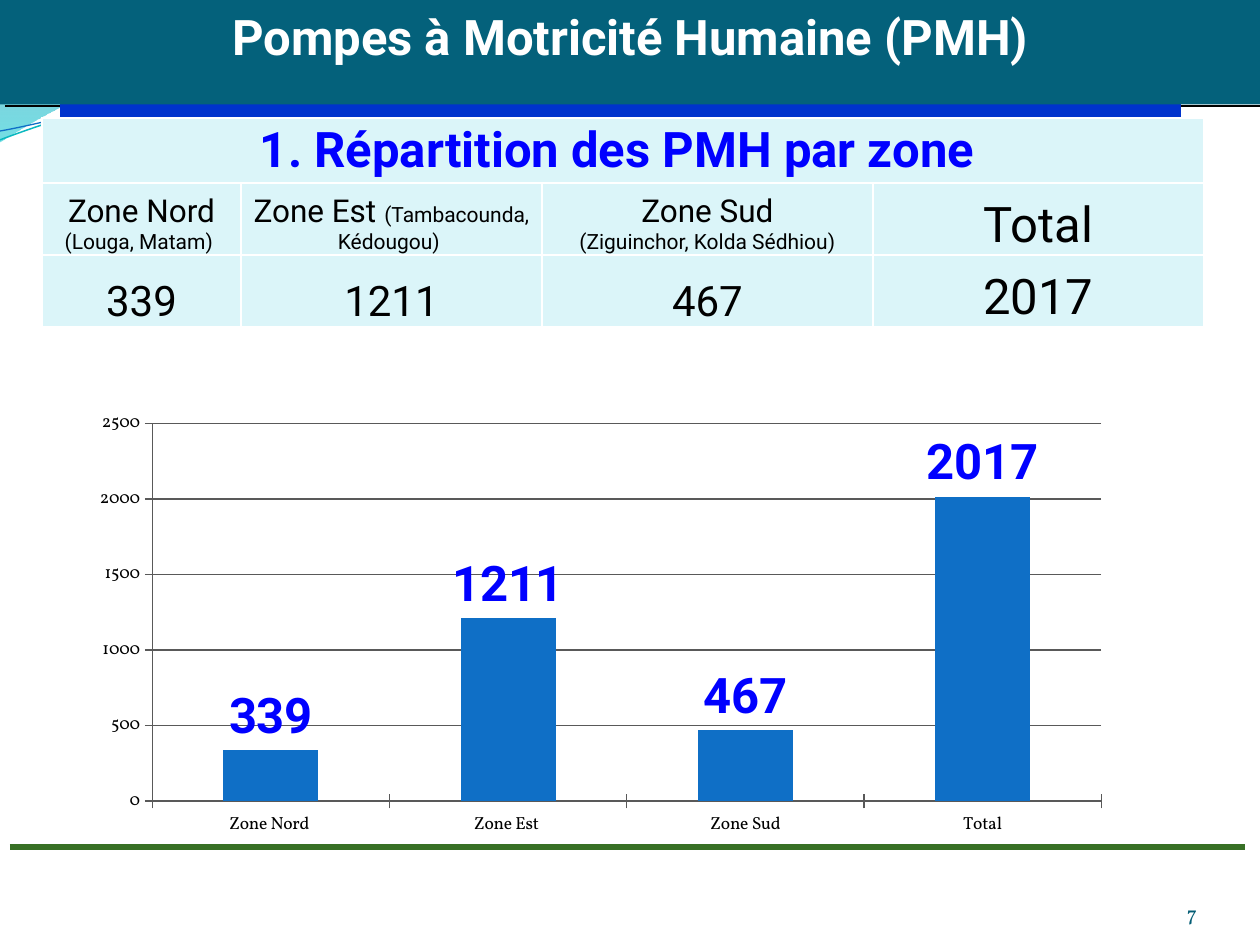
import math
import pptx
import pptx.chart.data
import pptx.dml.color
import pptx.enum.chart
import pptx.enum.shapes
import pptx.enum.text
import pptx.oxml
import pptx.oxml.ns
import pptx.util
from dataclasses import dataclass

SCALE = 914400 / 126  # EMU in one px
Align = pptx.enum.text.PP_ALIGN
Anchor = pptx.enum.text.MSO_ANCHOR
qn = pptx.oxml.ns.qn


@dataclass(frozen=True)
class Theme:
    sans: str = "Roboto"
    serif: str = "Vollkorn"
    teal: str = "04617B"
    page: str = "045D75"
    cell: str = "DBF5F9"
    label: str = "0000FF"
    bar: str = "0F6FC6"
    wave: str = "0AB8BF"
    band: str = "0033CC"
    green: str = "387026"
    grid: str = "595959"
    white: str = "FFFFFF"
    black: str = "000000"
    big: int = 28
    count: int = 24
    zone: int = 18
    small: int = 12
    axis: int = 10


THEME = Theme()


def emu(px):
    return pptx.util.Emu(round(px * SCALE))


def color(code):
    return pptx.dml.color.RGBColor.from_string(code)


def style(font, face, size, code, bold=False):
    font.name, font.size, font.bold = face, pptx.util.Pt(size), bold
    font.color.rgb = color(code)


def place(shape, box):
    shape.left, shape.top, shape.width, shape.height = map(emu, box)


def margins(frame, left, top, right, bottom):
    frame.margin_left, frame.margin_top = emu(left), emu(top)
    frame.margin_right, frame.margin_bottom = emu(right), emu(bottom)


def outline(slide, start, parts, closed):
    """Draw a path; a part has one end point or the three points of a cubic."""
    points = [(emu(x), emu(y)) for part in parts for x, y in part]
    builder = slide.shapes.build_freeform(*map(emu, start), scale=1.0)
    builder.add_line_segments(points, close=closed)
    shape = builder.convert_to_shape()
    shape.shadow.inherit = False
    lines = iter(list(shape.element.iter(qn("a:lnTo"))))
    for part in parts:
        group = [next(lines) for _ in part]
        if len(group) == 3:
            curve = group[0].makeelement(qn("a:cubicBezTo"), {})
            group[0].addprevious(curve)
            for line in group:
                curve.append(line[0])
                line.getparent().remove(line)
    return shape


def swoosh(slide, start, parts, stops):
    """Closed wave with a downward gradient; stops are (position, colour, opacity %)."""
    shape = outline(slide, start, parts, True)
    shape.line.fill.background()
    shape.fill.gradient()
    shape.fill.gradient_angle = 270
    for stop, (spot, code, _) in zip(shape.fill.gradient_stops, stops):
        stop.position, stop.color.rgb = spot, color(code)
    tags = shape.element.iter(qn("a:srgbClr"))
    for tag, (_, _, alpha) in zip(tags, stops):
        tag.append(tag.makeelement(qn("a:alpha"), {"val": str(alpha * 1000)}))


def ripple(slide, mid, start, parts, code, width, tilt=2.7):
    """Open wave, laid level and then tilted back about its middle."""
    cos, sin = math.cos(math.radians(tilt)), math.sin(math.radians(tilt))

    def level(point):
        x, y = point[0] - mid[0], point[1] - mid[1]
        return mid[0] + x * cos - y * sin, mid[1] + x * sin + y * cos

    flat = [[level(point) for point in part] for part in parts]
    shape = outline(slide, level(start), flat, False)
    shape.rotation = 360 - tilt
    shape.fill.background()
    shape.line.color.rgb, shape.line.width = color(code), pptx.util.Pt(width)


def rule(slide, left, right, y, code, width):
    kind = pptx.enum.shapes.MSO_CONNECTOR.STRAIGHT
    line = slide.shapes.add_connector(kind, emu(left), emu(y), emu(right), emu(y))
    line.line.color.rgb, line.line.width = color(code), pptx.util.Pt(width)
    props = line.element.spPr
    props.append(props.makeelement(qn("a:effectLst"), {}))


def backdrop(slide):
    swoosh(slide, (0, 0), [
        [(554, -1)],
        [(600, 21), (837, 79), (955, 79)],
        [(1075, 79), (1207, 33), (1260, 11)],
        [(1261, 45)],
        [(1239, 55), (1096, 96), (940, 95)],
        [(784, 95), (481, 35), (324, 43)],
        [(163, 45), (58, 105), (-1, 142)],
        [(0, 0)],
    ], [(0, "0074A1", 45), (1, "00C6CF", 55)])
    swoosh(slide, (604, -1), [
        [(641, 14), (859, 78), (969, 82)],
        [(1079, 87), (1211, 40), (1260, 26)],
        [(1260, 0)],
        [(604, -1)],
    ], [(0, "00A1A9", 30), (0.8, "008BBF", 45)])
    ripple(slide, (629, 72), (0, 140), [
        [(60, 117), (199, 72), (349, 66)],
        [(498, 59), (747, 112), (898, 101)],
        [(1050, 89), (1182, 19), (1257, -3)],
    ], THEME.wave, 0.85)
    ripple(slide, (629, 74), (0, 131), [
        [(59, 121), (207, 77), (357, 71)],
        [(508, 64), (752, 106), (903, 95)],
        [(1053, 84), (1186, 26), (1260, 8)],
    ], THEME.bar, 0.75)
    rule(slide, 5, 1260, 106, THEME.black, 1)
    rule(slide, 10, 1245, 847, THEME.green, 3)
    rule(slide, 60, 1181, 108, THEME.band, 10)


def heading(slide, box, text):
    title = slide.shapes.title
    place(title, box)
    title.fill.solid()
    title.fill.fore_color.rgb = color(THEME.teal)
    frame = title.text_frame
    frame.text, frame.word_wrap = text, True
    frame.auto_size = pptx.enum.text.MSO_AUTO_SIZE.SHAPE_TO_FIT_TEXT
    frame.vertical_anchor = Anchor.TOP
    margins(frame, 13, 6, 13, 6)
    para = frame.paragraphs[0]
    para.alignment = Align.CENTER
    style(para.font, THEME.sans, THEME.big, THEME.white, True)
    slide.shapes.element.append(title.element)  # in front of the waves


def border(cell):
    props = cell._tc.get_or_add_tcPr()
    for spot, side in enumerate(("lnL", "lnR", "lnT", "lnB")):
        props.insert(spot, pptx.oxml.parse_xml(
            f'<a:{side} {pptx.oxml.ns.nsdecls("a")} w="12700"><a:solidFill>'
            f'<a:srgbClr val="{THEME.white}"/></a:solidFill></a:{side}>'))


def fill(cell, paras, code=THEME.black, bold=False):
    """Write paragraphs, each a list of (text, size) runs, in one cell."""
    frame = cell.text_frame
    for spot, runs in enumerate(paras):
        para = frame.add_paragraph() if spot else frame.paragraphs[0]
        para.alignment = Align.CENTER
        for text, size in runs:
            run = para.add_run()
            run.text = text
            style(run.font, THEME.sans, size, code, bold)


def zones(slide, box):
    big, count, zone, small = THEME.big, THEME.count, THEME.zone, THEME.small
    table = slide.shapes.add_table(3, 4, *map(emu, box)).table
    table.first_row = table.horz_banding = False
    for col, width in zip(table.columns, (199, 301, 331, 331)):
        col.width = emu(width)
    for row, height in zip(table.rows, (65, 72, 72)):
        row.height = emu(height)
    for cell in table.iter_cells():
        cell.fill.solid()
        cell.fill.fore_color.rgb = color(THEME.cell)
        cell.vertical_anchor = Anchor.BOTTOM
        margins(cell, 1, 1, 1, 0)
        border(cell)
    top = table.cell(0, 0)
    top.merge(table.cell(0, 3))
    top.vertical_anchor = Anchor.MIDDLE
    fill(top, [[("1. Répartition des PMH par zone ", big)]], THEME.label, True)
    body = [
        [[[("Zone Nord ", zone), ("(Louga, Matam) ", small)]],
         [[("Zone Est ", zone), ("(Tambacounda, Kédougou) ", small)]],
         [[("Zone Sud", zone)], [(" (Ziguinchor, Kolda Sédhiou) ", small)]],
         [[("Total", big)]]],
        [[[("339", count)]], [[("1211", count)]], [[("467", count)]], [[("2017", big)]]],
    ]
    for y, row in enumerate(body, 1):
        for x, paras in enumerate(row):
            fill(table.cell(y, x), paras)


def bars(slide, box):
    data = pptx.chart.data.CategoryChartData()
    data.categories = ["Zone Nord ", "Zone Est ", "Zone Sud", "Total"]
    data.add_series("Series 1", (339, 1211, 467, 2017))
    kind = pptx.enum.chart.XL_CHART_TYPE.COLUMN_CLUSTERED
    chart = slide.shapes.add_chart(kind, *map(emu, box), data).chart
    chart.has_title = chart.has_legend = False
    style(chart.font, THEME.serif, THEME.axis, THEME.black)
    scale, base = chart.value_axis, chart.category_axis
    for line in (scale.format.line, scale.major_gridlines.format.line, base.format.line):
        line.color.rgb, line.width = color(THEME.grid), pptx.util.Pt(0.75)
    for axis in (scale, base):
        axis.major_tick_mark = pptx.enum.chart.XL_TICK_MARK.CROSS
    plot = chart.plots[0]
    plot.gap_width, plot.vary_by_categories = 150, False
    series = plot.series[0]
    series.format.fill.solid()
    series.format.fill.fore_color.rgb = color(THEME.bar)
    labels = series.data_labels
    labels.show_value = True
    labels.position = pptx.enum.chart.XL_LABEL_POSITION.OUTSIDE_END
    style(labels.font, THEME.sans, THEME.big, THEME.label, True)


def number(slide, box, text):
    frame = slide.shapes.add_textbox(*map(emu, box)).text_frame
    frame.text, frame.word_wrap = text, True
    frame.vertical_anchor = Anchor.BOTTOM
    margins(frame, 0, 0, 0, 0)
    para = frame.paragraphs[0]
    para.alignment = Align.RIGHT
    style(para.font, THEME.serif, THEME.small, THEME.page)


def main():
    deck = pptx.Presentation()
    deck.slide_width, deck.slide_height = emu(1260), emu(945)
    slide = deck.slides.add_slide(deck.slide_layouts[5])
    backdrop(slide)
    zones(slide, (42, 118, 1162, 209))
    heading(slide, (0, 0, 1260, 72), "Pompes à Motricité Humaine (PMH)")
    number(slide, (1092, 876, 105, 50), "7")
    bars(slide, (79, 403, 1043, 443))
    deck.save("out.pptx")


if __name__ == "__main__":
    main()
